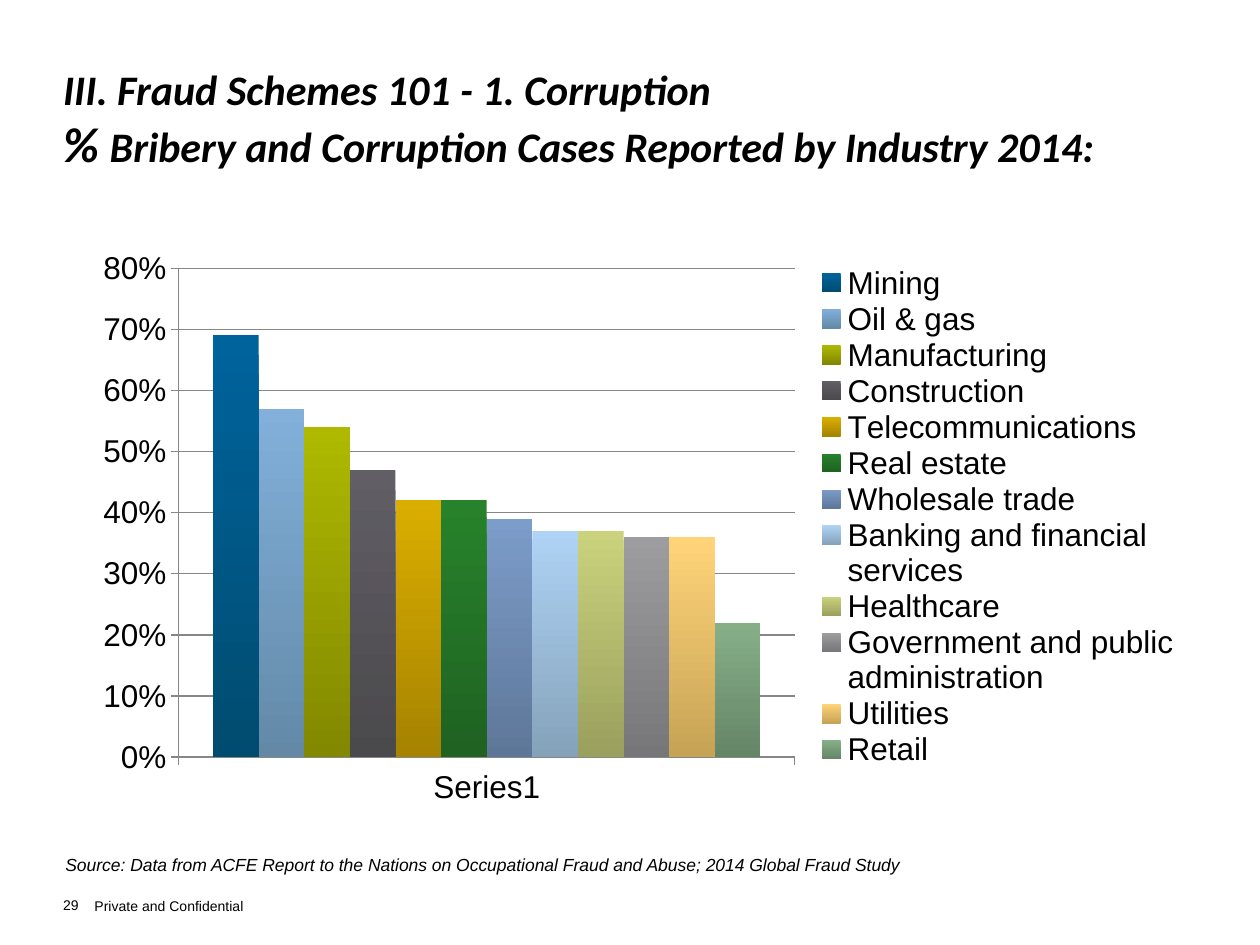
import pptx
import pptx.chart.data
import pptx.dml.color
import pptx.enum.chart
import pptx.enum.text
import pptx.oxml
import pptx.oxml.ns
import pptx.util

Inches = pptx.util.Inches
RGBColor = pptx.dml.color.RGBColor
chart_enums = pptx.enum.chart
text_enums = pptx.enum.text

# Content
TITLE_LINES = [
    [("III. Fraud Schemes 101 - 1. Corruption", "title")],
    [("% ", "title_symbol"),
     ("Bribery and Corruption Cases Reported by Industry 2014:", "title")],
]
CATEGORY = "Series1"
# industry, share of cases, top colour, bottom colour
INDUSTRIES = [
    ("Mining", 0.69, "00639C", "004C70"),
    ("Oil & gas", 0.57, "82B0DA", "6389A7"),
    ("Manufacturing", 0.54, "AEB900", "828800"),
    ("Construction", 0.47, "615E66", "4A494B"),
    ("Telecommunications", 0.42, "DAAE00", "A68300"),
    ("Real estate", 0.42, "27822B", "1F6222"),
    ("Wholesale trade", 0.39, "7C9CC9", "5E7799"),
    ("Banking and financial services", 0.37, "AFD3F5", "85A2BA"),
    ("Healthcare", 0.37, "CAD27D", "9AA05D"),
    ("Government and public administration", 0.36, "9D9C9F", "777678"),
    ("Utilities", 0.36, "FFD479", "C6A355"),
    ("Retail", 0.22, "86AF88", "658567"),
]
# text, (left, top, width, height), style, anchor, margins (x, y)
TOP = text_enums.MSO_ANCHOR.TOP
BOTTOM = text_enums.MSO_ANCHOR.BOTTOM
NOTES = [
    ("Source: Data from ACFE Report to the Nations on Occupational Fraud and Abuse; "
     "2014 Global Fraud Study", (0.42, 6.73, 6.88, 0.27), "source", TOP, (0.1, 0.05)),
    ("29", (0.5, 7.01, 0.31, 0.24), "footer", BOTTOM, (0, 0)),
    ("Private and Confidential", (0.75, 7.12, 1.2, 0.14), "footer", BOTTOM, (0, 0)),
]
TITLE_BOX = (0.5, 0.5, 9, 0.44)
CHART_BOX = (0.67, 1.5, 8.92, 5)
# Shares of the chart box
PLOT_LAYOUT = {"x": 0.084, "y": 0.126, "w": 0.548, "h": 0.776}
LEGEND_LAYOUT = {"x": 0.645, "y": 0.12, "w": 0.335, "h": 0.8}

THEME = {
    "text": "000000",
    "line": "878787",
    "title": {"name": "Calibri", "size": 24, "bold": True, "italic": True},
    "title_symbol": {"name": "Calibri", "size": 28, "bold": True, "italic": True},
    "chart": {"name": "Arial", "size": 18, "bold": False},
    "source": {"name": "Arial", "size": 10, "italic": True},
    "footer": {"name": "Arial", "size": 8},
}


def format_font(font, style):
    for name, value in THEME[style].items():
        setattr(font, name, pptx.util.Pt(value) if name == "size" else value)
    font.color.rgb = RGBColor.from_string(THEME["text"])


def format_frame(frame, anchor, margins=(0, 0), wrap=True):
    across, down = (Inches(margin) for margin in margins)
    values = {"margin_left": across, "margin_right": across, "margin_top": down,
              "margin_bottom": down, "vertical_anchor": anchor, "word_wrap": wrap,
              "auto_size": text_enums.MSO_AUTO_SIZE.NONE}
    for name, value in values.items():
        setattr(frame, name, value)


def add_title(slide):
    title = slide.shapes.title
    for name, value in zip(("left", "top", "width", "height"), TITLE_BOX):
        setattr(title, name, Inches(value))
    format_frame(title.text_frame, TOP)
    paragraph = title.text_frame.paragraphs[0]
    paragraph.alignment = text_enums.PP_ALIGN.LEFT
    for index, line in enumerate(TITLE_LINES):
        if index:
            paragraph.add_line_break()
        for text, style in line:
            run = paragraph.add_run()
            run.text = text
            format_font(run.font, style)


def add_note(slide, text, box, style, anchor, margins):
    shape = slide.shapes.add_textbox(*map(Inches, box))
    format_frame(shape.text_frame, anchor, margins, wrap=False)
    paragraph = shape.text_frame.paragraphs[0]
    paragraph.alignment = text_enums.PP_ALIGN.LEFT
    run = paragraph.add_run()
    run.text = text
    format_font(run.font, style)


def set_layout(parent, position, layout, target=""):
    """Place a chart part by hand; position is the layout's index in its parent."""
    for old_layout in parent.findall(pptx.oxml.ns.qn("c:layout")):
        parent.remove(old_layout)
    modes = '<c:xMode val="edge"/><c:yMode val="edge"/>'
    sizes = "".join(f'<c:{name} val="{value}"/>' for name, value in layout.items())
    parent.insert(position, pptx.oxml.parse_xml(
        f'<c:layout {pptx.oxml.ns.nsdecls("c")}><c:manualLayout>{target}{modes}{sizes}'
        '</c:manualLayout></c:layout>'))


def add_industry_chart(slide):
    data = pptx.chart.data.CategoryChartData(number_format="0%")
    data.categories = [CATEGORY]
    for name, share, *_ in INDUSTRIES:
        data.add_series(name, [share])
    chart = slide.shapes.add_chart(
        chart_enums.XL_CHART_TYPE.COLUMN_CLUSTERED, *map(Inches, CHART_BOX), data).chart
    format_font(chart.font, "chart")
    chart.has_title = False

    # Columns shade from top to bottom
    plot = chart.plots[0]
    set_layout(plot._element.getparent(), 0, PLOT_LAYOUT, '<c:layoutTarget val="inner"/>')
    for name, value in {"gap_width": 150, "overlap": 0, "vary_by_categories": False}.items():
        setattr(plot, name, value)
    for series, (_, _, *shades) in zip(plot.series, INDUSTRIES):
        fill = series.format.fill
        fill.gradient()
        fill.gradient_angle = 270
        for stop, shade in zip(fill.gradient_stops, shades):
            stop.color.rgb = RGBColor.from_string(shade)
        series.format.line.fill.background()

    # Axes
    value_axis = chart.value_axis
    scale = {"minimum_scale": 0, "maximum_scale": 0.8, "major_unit": 0.1,
             "has_major_gridlines": True}
    for name, value in scale.items():
        setattr(value_axis, name, value)
    value_axis.tick_labels.number_format = "0%"
    value_axis.tick_labels.number_format_is_linked = False
    for axis in (value_axis, chart.category_axis):
        axis.major_tick_mark = chart_enums.XL_TICK_MARK.OUTSIDE
        axis.minor_tick_mark = chart_enums.XL_TICK_MARK.NONE
    for part in (value_axis, chart.category_axis, value_axis.major_gridlines):
        part.format.line.color.rgb = RGBColor.from_string(THEME["line"])
        part.format.line.width = pptx.util.Pt(0.75)

    # Legend: one column to the right of the plot
    chart.has_legend = True
    legend = chart.legend
    legend.position = chart_enums.XL_LEGEND_POSITION.RIGHT
    legend.include_in_layout = False
    format_font(legend.font, "chart")
    set_layout(legend._element, 1, LEGEND_LAYOUT)


def main():
    presentation = pptx.Presentation()
    presentation.slide_width, presentation.slide_height = Inches(10), Inches(7.5)
    slide = presentation.slides.add_slide(presentation.slide_layouts[5])
    add_title(slide)
    add_industry_chart(slide)
    for note in NOTES:
        add_note(slide, *note)
    presentation.save("out.pptx")


if __name__ == "__main__":
    main()
